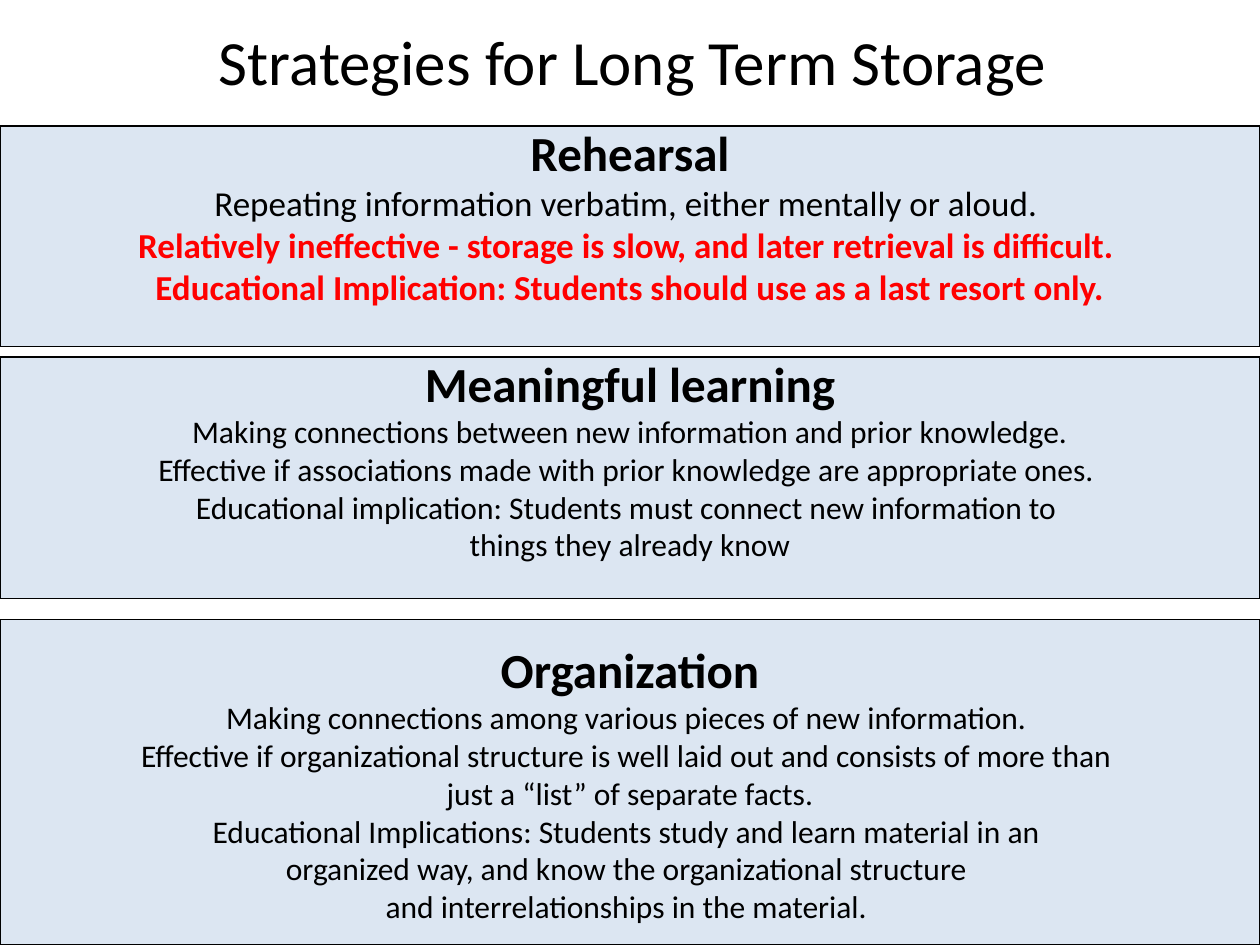
from pptx import Presentation
from pptx.dml.color import RGBColor
from pptx.enum.shapes import MSO_SHAPE
from pptx.enum.text import MSO_ANCHOR, PP_ALIGN
from pptx.util import Inches, Pt

COLORS = {"text": "000000", "warning": "FF0000", "panel": "DCE6F2", "border": "000000"}
FONT = "Calibri"
UNIT = Inches(1) // 12
COLUMNS, ROWS = 120, 90
HEADING_SIZE = 28

PANELS = [
    {"top": 12, "rows": 21, "size": 20, "bottom_inset": 0.39, "heading": "Rehearsal", "lines": [
        ("Repeating information verbatim, either mentally or aloud. ", False),
        ("Relatively ineffective - storage is slow, and later retrieval is difficult. ", True),
        ("Educational Implication: Students should use as a last resort only.", True),
    ]},
    {"top": 34, "rows": 23, "size": 18, "bottom_inset": 0.36, "heading": "Meaningful learning", "lines": [
        ("Making connections between new information and prior knowledge.", False),
        ("Effective if associations made with prior knowledge are appropriate ones. ", False),
        ("Educational implication: Students must connect new information to ", False),
        ("things they already know", False),
    ]},
    {"top": 59, "rows": 31, "size": 18, "bottom_inset": 0.05, "heading": "Organization", "lines": [
        ("Making connections among various pieces of new information. ", False),
        ("Effective if organizational structure is well laid out and consists of more than ", False),
        ("just a “list” of separate facts.", False),
        ("Educational Implications: Students study and learn material in an ", False),
        ("organized way, and know the organizational structure ", False),
        ("and interrelationships in the material. ", False),
    ]},
]


def grid_box(left, top, columns, rows):
    """Return left, top, width and height for a span of grid cells."""
    return [cells * UNIT for cells in (left, top, columns, rows)]


def add_run(paragraph, text, size, color="text", bold=False):
    """Append one formatted run to a paragraph."""
    run = paragraph.add_run()
    run.text = text
    run.font.name = FONT
    run.font.size = Pt(size)
    run.font.bold = bold
    run.font.color.rgb = RGBColor.from_string(COLORS[color])


def add_title(slide):
    """Add the centred slide title."""
    frame = slide.shapes.add_textbox(*grid_box(6, 0, 110, 11)).text_frame
    frame.word_wrap = True
    frame.vertical_anchor = MSO_ANCHOR.MIDDLE
    paragraph = frame.paragraphs[0]
    paragraph.alignment = PP_ALIGN.CENTER
    add_run(paragraph, "Strategies for Long Term Storage", 36)
    add_run(paragraph, " ", 40)


def add_panel(slide, panel):
    """Add a full-width strategy panel with its heading and lines."""
    box = grid_box(0, panel["top"], COLUMNS, panel["rows"])
    shape = slide.shapes.add_shape(MSO_SHAPE.RECTANGLE, *box)
    shape.shadow.inherit = False
    shape.fill.solid()
    shape.fill.fore_color.rgb = RGBColor.from_string(COLORS["panel"])
    shape.line.color.rgb = RGBColor.from_string(COLORS["border"])
    shape.line.width = Pt(1)
    frame = shape.text_frame
    frame.word_wrap = False
    frame.vertical_anchor = MSO_ANCHOR.MIDDLE
    frame.margin_bottom = Inches(panel["bottom_inset"])
    heading = frame.paragraphs[0]
    heading.alignment = PP_ALIGN.CENTER
    add_run(heading, panel["heading"], HEADING_SIZE, bold=True)
    for text, is_warning in panel["lines"]:
        paragraph = frame.add_paragraph()
        paragraph.alignment = PP_ALIGN.CENTER
        color = "warning" if is_warning else "text"
        add_run(paragraph, text, panel["size"], color, is_warning)


def main():
    """Build and save the slide."""
    presentation = Presentation()
    presentation.slide_width = COLUMNS * UNIT
    presentation.slide_height = ROWS * UNIT
    slide = presentation.slides.add_slide(presentation.slide_layouts[6])
    add_title(slide)
    for panel in PANELS:
        add_panel(slide, panel)
    presentation.save("out.pptx")


if __name__ == "__main__":
    main()
